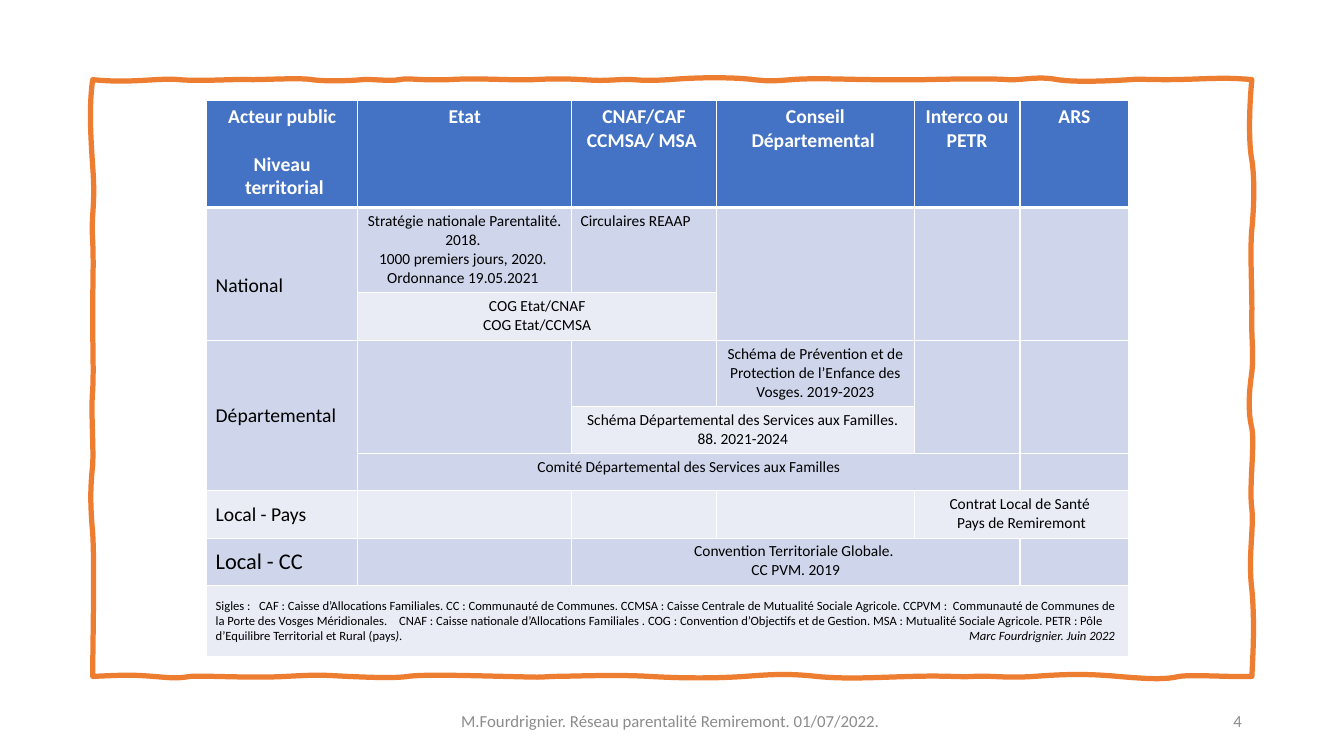
from dataclasses import dataclass

from lxml import etree
from pptx import Presentation
from pptx.dml.color import RGBColor
from pptx.enum.text import MSO_ANCHOR, PP_ALIGN
from pptx.oxml.ns import qn
from pptx.util import Emu, Pt

PX = 9144  # 100 px to the inch
LEFT, CENTER, RIGHT = PP_ALIGN.LEFT, PP_ALIGN.CENTER, PP_ALIGN.RIGHT
TOP, MIDDLE = MSO_ANCHOR.TOP, MSO_ANCHOR.MIDDLE


@dataclass(frozen=True)
class Theme:
    font: str = "Calibri"
    head: str = "4472C4"
    dark: str = "CFD5EA"
    light: str = "E9EBF5"
    frame: str = "ED7D31"
    white: str = "FFFFFF"
    black: str = "000000"
    gray: str = "8C8C8C"
    title: int = 14
    large: int = 16
    body: int = 11
    note: int = 9
    foot: int = 12


THEME = Theme()

# Frame sides: (control, offset, control, offset, end) along each edge
WEST_X, EAST_X, UPPER_Y, LOWER_Y = 92, 1242, 79, 671
LOWER = [
    (117, -1, 128, -2, 152), (176, 2, 175, 2, 189), (204, -1, 249, 2, 284),
    (319, -2, 323, -1, 345), (367, 1, 392, 2, 405), (418, -2, 458, -1, 500),
    (542, 1, 530, 1, 549), (567, 0, 609, -2, 644), (678, 2, 711, 2, 739),
    (766, -2, 782, -3, 810), (839, 3, 869, 1, 905), (942, -1, 950, 1, 966),
    (982, -1, 998, 2, 1026), (1054, -2, 1075, -3, 1109),
    (1144, 3, 1157, 3, 1170), (1183, -2, 1226, 1, 1242)]
EAST = [
    (650, 1, 618, 3, 585), (553, -4, 526, 2, 505), (484, -3, 442, 3, 425),
    (409, -4, 389, -3, 369), (349, 2, 332, -1, 307), (282, 0, 247, -2, 227),
    (207, 2, 178, 3, 159), (139, -4, 97, -2, 79)]
UPPER = [
    (1212, -3, 1189, 0, 1158), (1128, 0, 1136, -1, 1121),
    (1105, 1, 1068, 3, 1049), (1030, -4, 1012, 1, 1000),
    (989, -1, 957, -1, 917), (877, 0, 890, 0, 868), (845, 0, 807, -2, 785),
    (762, 2, 759, 1, 747), (735, -2, 698, -3, 664), (629, 2, 634, -1, 615),
    (595, 1, 595, 1, 578), (560, -1, 548, -1, 529), (509, 1, 476, -2, 445),
    (414, 1, 407, -2, 396), (386, 2, 368, -1, 359), (351, 1, 322, 2, 310),
    (298, -2, 264, 0, 250), (236, -1, 200, 2, 178), (156, -2, 131, 4, 92)]
WEST = [
    (100, -3, 123, -3, 165), (206, 3, 212, -2, 239), (265, 1, 276, 0, 313),
    (349, 0, 367, 1, 387), (407, -2, 441, 1, 461), (480, -2, 496, -3, 529),
    (562, 2, 641, 0, 671)]

# Table content
COLS = [150, 212, 144, 196, 105, 108]
ROWS = [106, 84, 48, 65, 47, 37, 47, 47, 71]
HEADS = [
    ["Acteur public", "Niveau", " territorial"], ["Etat"],
    ["CNAF/CAF", "CCMSA/ MSA "], ["Conseil Départemental "],
    ["Interco ou PETR"], ["ARS"]]
SIDES = [
    (1, "National", THEME.title), (3, "Départemental", THEME.title),
    (6, "Local - Pays", THEME.title), (7, "Local - CC", THEME.large)]
BODY = [  # row, column, lines, alignment, anchor
    (1, 1, ["Stratégie nationale Parentalité. 2018. ",
            "1000 premiers jours, 2020. ", "Ordonnance 19.05.2021 "],
     CENTER, TOP),
    (1, 2, ["Circulaires REAAP"], LEFT, TOP),
    (2, 1, ["COG Etat/CNAF", "COG Etat/CCMSA"], CENTER, TOP),
    (3, 3, ["Schéma de Prévention et de Protection de l’Enfance des Vosges. "
            "2019-2023"], CENTER, TOP),
    (4, 2, ["Schéma Départemental des Services aux Familles. 88. 2021-2024"],
     CENTER, MIDDLE),
    (5, 1, ["Comité Départemental des Services aux Familles"], CENTER, TOP),
    (6, 4, ["Contrat Local de Santé ", "Pays de Remiremont"], CENTER, TOP),
    (7, 2, ["Convention Territoriale Globale. ", "CC PVM. 2019"], CENTER, TOP)]
SPANS = [  # row, column, rows, columns
    (1, 0, 2, 1), (1, 3, 2, 1), (1, 4, 2, 1), (1, 5, 2, 1), (2, 1, 1, 2),
    (3, 0, 3, 1), (3, 1, 2, 1), (3, 4, 2, 1), (3, 5, 2, 1), (4, 2, 1, 2),
    (5, 1, 1, 4), (6, 4, 1, 2), (7, 2, 1, 3), (8, 0, 1, 6)]
NOTE = (
    "Sigles :\tCAF : Caisse d’Allocations Familiales. CC : Communauté de "
    "Communes. CCMSA : Caisse Centrale de Mutualité Sociale Agricole. "
    "CCPVM :  Communauté de Communes de la Porte des Vosges Méridionales.\t"
    "CNAF : Caisse nationale d’Allocations Familiales . COG : Convention "
    "d’Objectifs et de Gestion. MSA : Mutualité Sociale Agricole. PETR : Pôle "
    "d’Equilibre Territorial et Rural (pays")
CREDIT = ").\tMarc Fourdrignier. Juin 2022"
TABS = [(43, "l"), (182, "l"), (892, "r")]


def px(size):
    return Emu(round(size * PX))


def rgb(color):
    return RGBColor.from_string(color)


def style(para, size, color, align=LEFT, bold=False):
    para.alignment = align
    font = para.font
    font.name, font.size, font.bold = THEME.font, Pt(size), bold
    font.color.rgb = rgb(color)


def write(frame, lines, size, color, align=LEFT, bold=False):
    frame.text = "\n".join(lines)
    for para in frame.paragraphs:
        style(para, size, color, align, bold)


def trace(side, edge, flat):
    """Two controls and an end for each curve of one frame side."""
    for c1, w1, c2, w2, end in side:
        trio = [(c1, edge + w1), (c2, edge + w2), (end, edge)]
        yield trio if flat else [(x, y) for y, x in trio]


def add_frame(slide):
    curves = [*trace(LOWER, LOWER_Y, True), *trace(EAST, EAST_X, False),
              *trace(UPPER, UPPER_Y, True), *trace(WEST, WEST_X, False)]
    pen = slide.shapes.build_freeform(px(WEST_X), px(LOWER_Y), scale=1.0)
    ends = [trio[-1] for trio in curves]
    pen.add_line_segments([(px(x), px(y)) for x, y in ends], close=True)
    frame = pen.convert_to_shape()
    # Bend each straight segment into its cubic curve
    lines = list(frame._element.iter(qn("a:lnTo")))
    for line, trio in zip(lines, curves):
        bend = etree.Element(qn("a:cubicBezTo"))
        for x, y in trio:
            etree.SubElement(bend, qn("a:pt"), x=str(px(x - WEST_X)),
                             y=str(px(y - UPPER_Y)))
        line.getparent().replace(line, bend)
    frame.shadow.inherit = False
    frame.fill.background()
    frame.line.color.rgb = rgb(THEME.frame)
    frame.line.width = Pt(3.75)


def add_label(slide, left, width, text, align):
    box = slide.shapes.add_textbox(px(left), px(695), px(width), px(40))
    frame = box.text_frame
    frame.word_wrap = True
    frame.vertical_anchor = MIDDLE
    write(frame, [text], THEME.foot, THEME.gray, align)


def add_edge(cell, tag, width):
    props = cell._tc.get_or_add_tcPr()
    line = etree.SubElement(props, qn(f"a:{tag}"), w=str(Pt(width)))
    fill = etree.SubElement(line, qn("a:solidFill"))
    etree.SubElement(fill, qn("a:srgbClr"), val=THEME.white)


def dress(cell, row):
    """Margins, borders, base font and banded fill of one cell."""
    cell.margin_left = cell.margin_right = px(9)
    cell.margin_top = cell.margin_bottom = px(4)
    style(cell.text_frame.paragraphs[0], THEME.body, THEME.black)
    for tag in ("lnL", "lnR", "lnT", "lnB"):
        thick = (row, tag) in ((0, "lnB"), (1, "lnT"))
        add_edge(cell, tag, 3 if thick else 1)
    band = THEME.dark if row % 2 else THEME.light
    cell.fill.solid()
    cell.fill.fore_color.rgb = rgb(band if row else THEME.head)


def add_note(cell):
    cell.vertical_anchor = MIDDLE
    para = cell.text_frame.paragraphs[0]
    style(para, THEME.note, THEME.black)
    para.add_run().text = NOTE
    tail = para.add_run()
    tail.text = CREDIT
    tail.font.italic = True
    stops = etree.Element(qn("a:tabLst"))
    for pos, kind in TABS:
        etree.SubElement(stops, qn("a:tab"), pos=str(px(pos)), algn=kind)
    para._p.get_or_add_pPr().insert(0, stops)


def add_grid(slide):
    shape = slide.shapes.add_table(len(ROWS), len(COLS), px(205), px(100),
                                   px(sum(COLS)), px(sum(ROWS)))
    table = shape.table
    table.horz_banding = False
    for col, width in zip(table.columns, COLS):
        col.width = px(width)
    for i, (row, height) in enumerate(zip(table.rows, ROWS)):
        row.height = px(height)
        for cell in row.cells:
            dress(cell, i)
    for row, col, down, across in SPANS:
        last = table.cell(row + down - 1, col + across - 1)
        table.cell(row, col).merge(last)

    # Text
    for col, lines in enumerate(HEADS):
        write(table.cell(0, col).text_frame, lines, THEME.title, THEME.white,
              CENTER, True)
    table.cell(0, 0).text_frame.paragraphs[1].space_before = Pt(17)
    for row, text, size in SIDES:
        cell = table.cell(row, 0)
        cell.vertical_anchor = MIDDLE
        write(cell.text_frame, [text], size, THEME.black)
    table.cell(1, 0).margin_top = px(28)
    for row, col, lines, align, anchor in BODY:
        cell = table.cell(row, col)
        cell.vertical_anchor = anchor
        write(cell.text_frame, lines, THEME.body, THEME.black, align)
    add_note(table.cell(8, 0))


def main():
    deck = Presentation()
    deck.slide_width, deck.slide_height = Emu(12192000), px(750)
    slide = deck.slides.add_slide(deck.slide_layouts[6])
    add_frame(slide)
    add_label(slide, 442, 450,
              "M.Fourdrignier. Réseau parentalité Remiremont. 01/07/2022. ", CENTER)
    add_label(slide, 942, 300, "4", RIGHT)
    add_grid(slide)
    deck.save("out.pptx")


if __name__ == "__main__":
    main()
